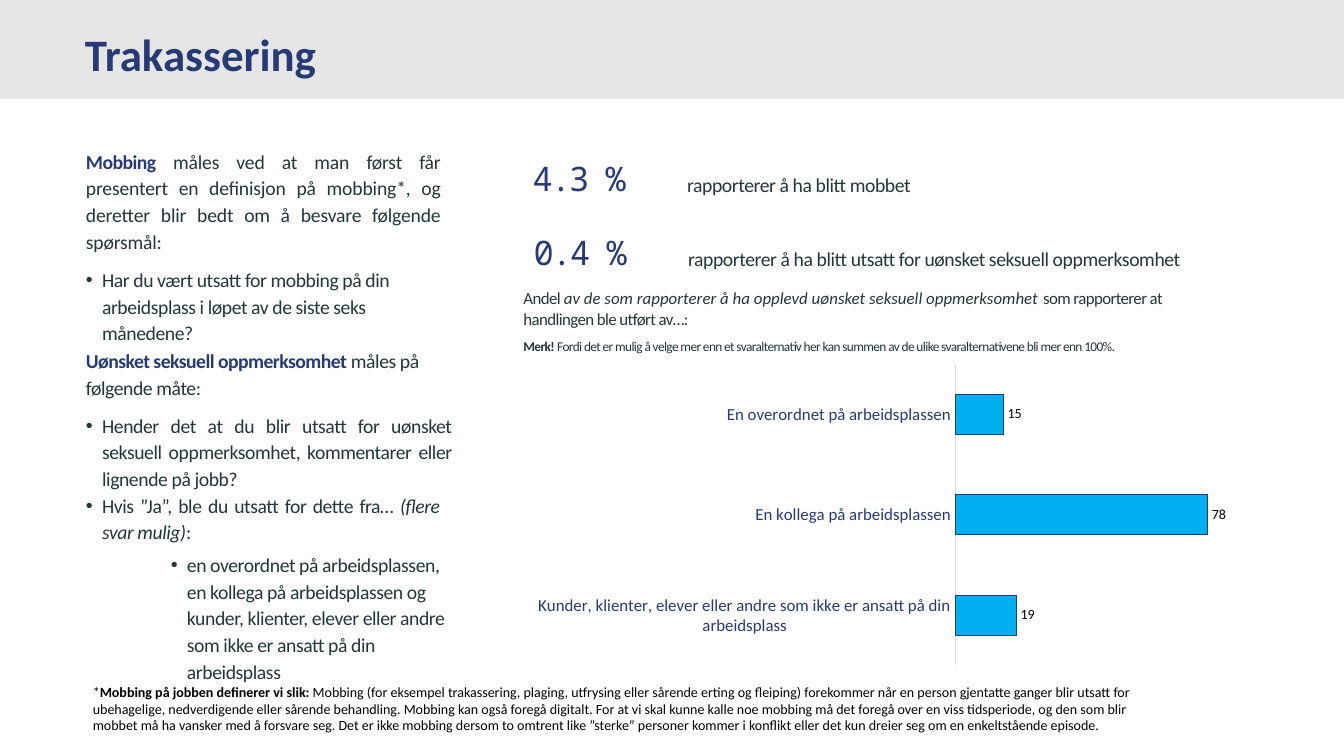
from lxml.etree import SubElement
from pptx import Presentation
from pptx.chart.data import CategoryChartData
from pptx.dml.color import RGBColor
from pptx.enum.chart import XL_CHART_TYPE, XL_LABEL_POSITION, XL_TICK_MARK
from pptx.enum.shapes import MSO_SHAPE
from pptx.enum.text import MSO_ANCHOR, PP_ALIGN
from pptx.oxml.ns import qn
from pptx.util import Pt

PX = 9144  # EMU per px, 100 px to the inch
NAVY = RGBColor(0x26, 0x3A, 0x76)
INK = RGBColor(0x22, 0x37, 0x3A)
BLACK = RGBColor(0, 0, 0)
BAND_GREY = RGBColor(0xE7, 0xE6, 0xE6)
AXIS_GREY = RGBColor(0xD9, 0xD9, 0xD9)
BAR_BLUE = RGBColor(0x00, 0xAF, 0xEF)
BODY_FONT, NUMBER_FONT = "Calibri", "Noto Sans Mono"

# Run styles; tracking is in hundredths of a point
BODY = dict(size=14, color=INK, tracking=-32)
LOOSE_BODY = dict(BODY, tracking=-15)
TERM = dict(BODY, color=NAVY, bold=True, tracking=-40)
ASIDE = dict(BODY, italic=True)
NUMBER = dict(size=24, color=NAVY, font=NUMBER_FONT, tracking=-140)
LEAD = dict(size=12, color=INK, tracking=-42)
LEAD_ITALIC = dict(LEAD, italic=True, tracking=3)
REMARK = dict(size=9.5, color=INK, tracking=-43)
FOOT = dict(size=10, color=BLACK)

# Paragraph styles
PLAIN = dict(left=3, spacing=1.13)
BULLET = dict(left=19, hanging=16, spacing=1.13)
SUB_BULLET = dict(BULLET, left=103, level=1)
JUSTIFIED = dict(align=PP_ALIGN.JUSTIFY)

# Each box: left, top, width, height, (left and top inset), paragraphs of (style, runs)
TITLE = (84, 28, 296, 52, (0, 5), [
    (dict(spacing=0.9), [("Trakassering", dict(size=32, color=NAVY, bold=True))])])

BULLYING = (82, 142, 361, 175, (0, 3), [
    (dict(PLAIN, **JUSTIFIED, right=7), [
        ("Mobbing ", TERM),
        ("måles ved at man først får presentert en definisjon på mobbing*, og "
         "deretter blir bedt om å besvare følgende spørsmål:", LOOSE_BODY)]),
    (dict(BULLET, before=8.3, right=20), [
        ("Har du vært utsatt for mobbing på din arbeidsplass i løpet av de "
         "siste seks månedene?", BODY)])])

ATTENTION = (82, 339, 378, 316, (0, 3), [
    (PLAIN, [("Uønsket seksuell oppmerksomhet ", TERM),
             ("måles på følgende måte:", BODY)]),
    (dict(BULLET, **JUSTIFIED, before=8.3, right=13), [
        ("Hender det at du blir utsatt for uønsket seksuell oppmerksomhet, "
         "kommentarer eller lignende på jobb?", BODY)]),
    (dict(BULLET, **JUSTIFIED, right=25), [
        ("Hvis ”Ja”, ble du utsatt for dette fra… ", BODY),
        ("(flere svar mulig)", ASIDE), (":", BODY)]),
    (dict(SUB_BULLET, before=4.2, right=10), [
        ("en overordnet på arbeidsplassen, en kollega på arbeidsplassen og "
         "kunder, klienter, elever eller andre som ikke er ansatt på din "
         "arbeidsplass", BODY)])])

CHART_LEAD = (515, 282, 677, 43, (0, 3), [
    (dict(left=3), [
        ("Andel ", LEAD),
        ("av de som rapporterer å ha opplevd uønsket seksuell oppmerksomhet ",
         LEAD_ITALIC),
        ("som rapporterer at handlingen ble utført av…:", LEAD)])])

CHART_REMARK = (515, 329, 646, 20, (0, 3), [
    (dict(left=3, spacing=1.16), [
        ("Merk! ", dict(REMARK, bold=True)),
        ("Fordi det er mulig å velge mer enn et svaralternativ her kan summen av "
         "de ulike svaralternativene bli mer enn 100%.", REMARK)])])

FOOTNOTE = (82, 671, 1079, 77, (10, 5), [
    ({}, [
        ("*", FOOT),
        ("Mobbing på jobben definerer vi slik:", dict(FOOT, bold=True)),
        (" Mobbing (for eksempel trakassering, plaging, utfrysing eller sårende "
         "erting og fleiping) forekommer når en person gjentatte ganger blir "
         "utsatt for ubehagelige, nedverdigende eller sårende behandling. Mobbing "
         "kan også foregå digitalt. For at vi skal kunne kalle noe mobbing må det "
         "foregå over en viss tidsperiode, og den som blir mobbet må ha vansker "
         "med å forsvare seg. Det er ikke mobbing dersom to omtrent like ”sterke” "
         "personer kommer i konflikt eller det kun dreier seg om en enkeltstående "
         "episode.", FOOT)])])

# Left and top of the figure, the figure, its label
KEY_FIGURES = [
    (514, 151, "4.3 %", "rapporterer å ha blitt mobbet"),
    (515, 224, "0.4 %",
     "rapporterer å ha blitt utsatt for uønsket seksuell oppmerksomhet"),
]
FIGURE_WIDTH, LABEL_WIDTH = 140, 520
LABEL_SHIFT, LABEL_DROP = 166, 20  # sets the label on the figure's baseline

PERPETRATORS = [
    ("Kunder, klienter, elever eller andre som ikke er ansatt på din arbeidsplass", 19),
    ("En kollega på arbeidsplassen", 78),
    ("En overordnet på arbeidsplassen", 15),
]
CHART_AREA = (525, 345, 757, 329)
PLOT_AREA = dict(x=0.555, y=0.046, w=0.424, h=0.907)


def px(*lengths):
    return [length * PX for length in lengths]


def style_font(font, size, color, font_name=BODY_FONT, bold=False, italic=False):
    font.size, font.name, font.bold, font.italic = Pt(size), font_name, bold, italic
    font.color.rgb = color


def add_styled_run(paragraph, text, size, color, font=BODY_FONT, tracking=0, **weight):
    run = paragraph.add_run()
    run.text = text
    style_font(run.font, size, color, font, **weight)
    run._r.get_or_add_rPr().set("spc", str(tracking))


def style_paragraph(paragraph, left=0, right=0, hanging=0, spacing=None, before=0,
                    align=PP_ALIGN.LEFT, level=0):
    """Lengths in px, spacing before in points; a hanging indent gets a bullet."""
    paragraph.alignment, paragraph.level = align, level
    paragraph.space_before = Pt(before)
    if spacing:
        paragraph.line_spacing = spacing
    properties = paragraph._p.get_or_add_pPr()
    for name, length in zip(("marL", "marR", "indent"), px(left, right, -hanging)):
        properties.set(name, str(length))
    if hanging:
        SubElement(properties, qn("a:buFont"), typeface="Arial")
        SubElement(properties, qn("a:buChar"), char="•")


def add_text(slide, left, top, width, height, insets, paragraphs):
    frame = slide.shapes.add_textbox(*px(left, top, width, height)).text_frame
    frame.word_wrap = True
    frame.margin_left, frame.margin_top = px(*insets)
    frame.margin_right = frame.margin_left
    frame.margin_bottom = 0
    for index, (style, runs) in enumerate(paragraphs):
        paragraph = frame.add_paragraph() if index else frame.paragraphs[0]
        style_paragraph(paragraph, **style)
        for text, run_style in runs:
            add_styled_run(paragraph, text, **run_style)
    return frame


def add_perpetrator_chart(slide):
    data = CategoryChartData(number_format="0")
    data.categories = [category for category, _ in PERPETRATORS]
    data.add_series("Series 1", [share for _, share in PERPETRATORS])
    chart = slide.shapes.add_chart(
        XL_CHART_TYPE.BAR_CLUSTERED, *px(*CHART_AREA), data).chart
    chart.has_legend = chart.has_title = False
    style_font(chart.font, 10, BLACK)

    categories, shares = chart.category_axis, chart.value_axis
    categories.major_tick_mark = XL_TICK_MARK.NONE
    categories.format.line.color.rgb = AXIS_GREY
    categories.format.line.width = Pt(0.75)
    style_font(categories.tick_labels.font, 12, NAVY)
    shares.minimum_scale, shares.maximum_scale = 0, 100
    shares.has_major_gridlines = False
    shares.visible = False

    plot = chart.plots[0]
    plot.gap_width, plot.overlap, plot.vary_by_categories = 150, -25, False
    bars = plot.series[0]
    bars.format.fill.solid()
    bars.format.fill.fore_color.rgb = BAR_BLUE
    bars.format.line.color.rgb = NAVY
    bars.format.line.width = Pt(0.75)
    labels = bars.data_labels
    labels.show_value = True
    labels.number_format, labels.number_format_is_linked = "0", False
    labels.position = XL_LABEL_POSITION.OUTSIDE_END
    style_font(labels.font, 10, BLACK)

    plot_area = chart._chartSpace.chart.plotArea
    for old_layout in plot_area.findall(qn("c:layout")):
        plot_area.remove(old_layout)
    layout = SubElement(plot_area, qn("c:layout"))
    plot_area.insert(0, layout)
    manual = SubElement(layout, qn("c:manualLayout"))
    settings = dict(layoutTarget="inner", xMode="edge", yMode="edge", **PLOT_AREA)
    for name, value in settings.items():
        SubElement(manual, qn(f"c:{name}"), val=str(value))


def main():
    deck = Presentation()
    deck.slide_width, deck.slide_height = px(1330, 748)
    slide = deck.slides.add_slide(deck.slide_layouts[6])

    band = slide.shapes.add_shape(MSO_SHAPE.RECTANGLE, *px(0, 0, 1330, 98))
    band.shadow.inherit = False
    band.fill.solid()
    band.fill.fore_color.rgb = BAND_GREY
    band.line.fill.background()

    add_text(slide, *TITLE).vertical_anchor = MSO_ANCHOR.MIDDLE
    for box in (BULLYING, ATTENTION, CHART_LEAD, CHART_REMARK, FOOTNOTE):
        add_text(slide, *box)
    for left, top, figure, label in KEY_FIGURES:
        add_text(slide, left, top, FIGURE_WIDTH, 50, (13, 5), [({}, [(figure, NUMBER)])])
        add_text(slide, left + LABEL_SHIFT, top + LABEL_DROP, LABEL_WIDTH, 25, (0, 0),
                 [({}, [(label, BODY)])])
    add_perpetrator_chart(slide)
    deck.save("out.pptx")


if __name__ == "__main__":
    main()
